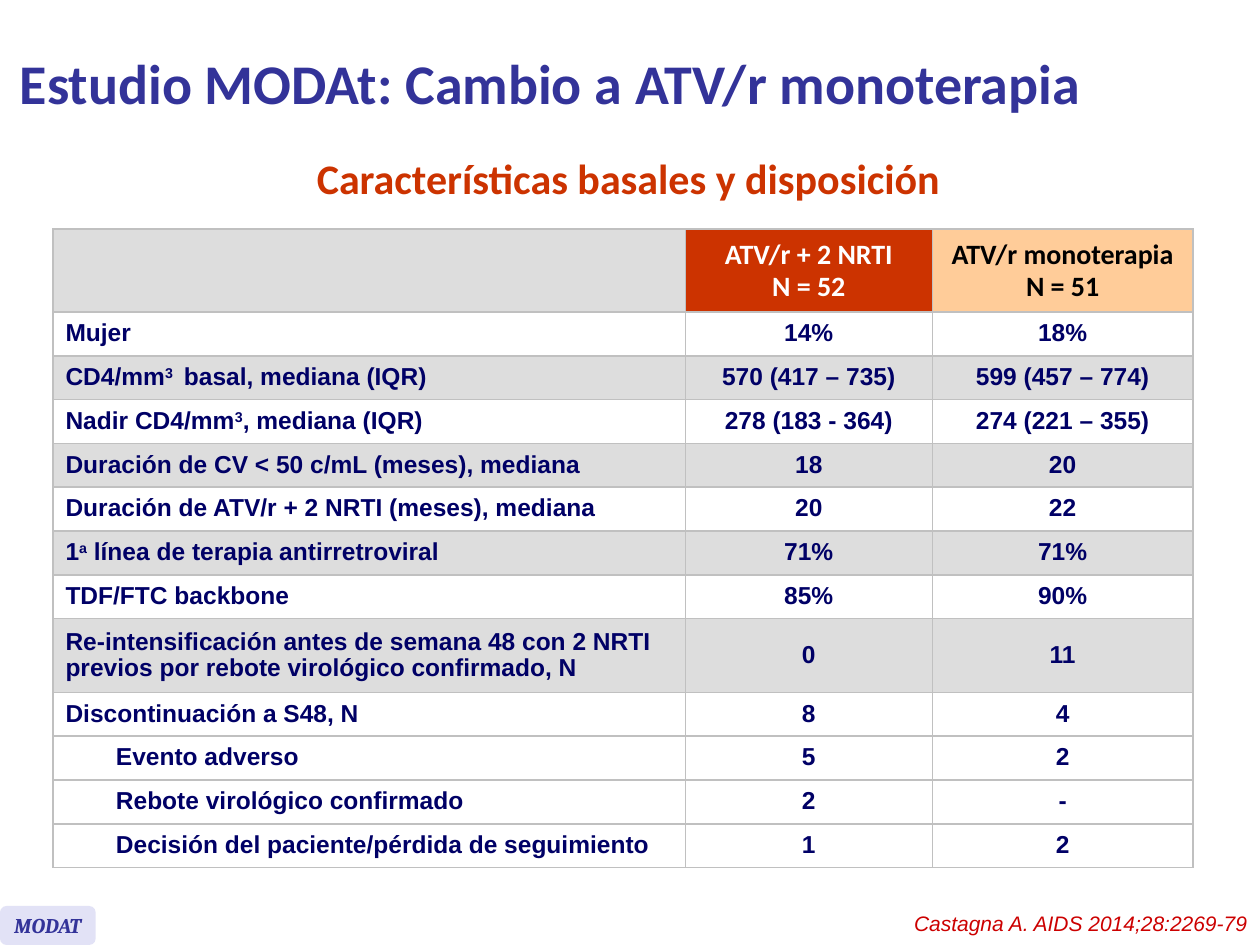
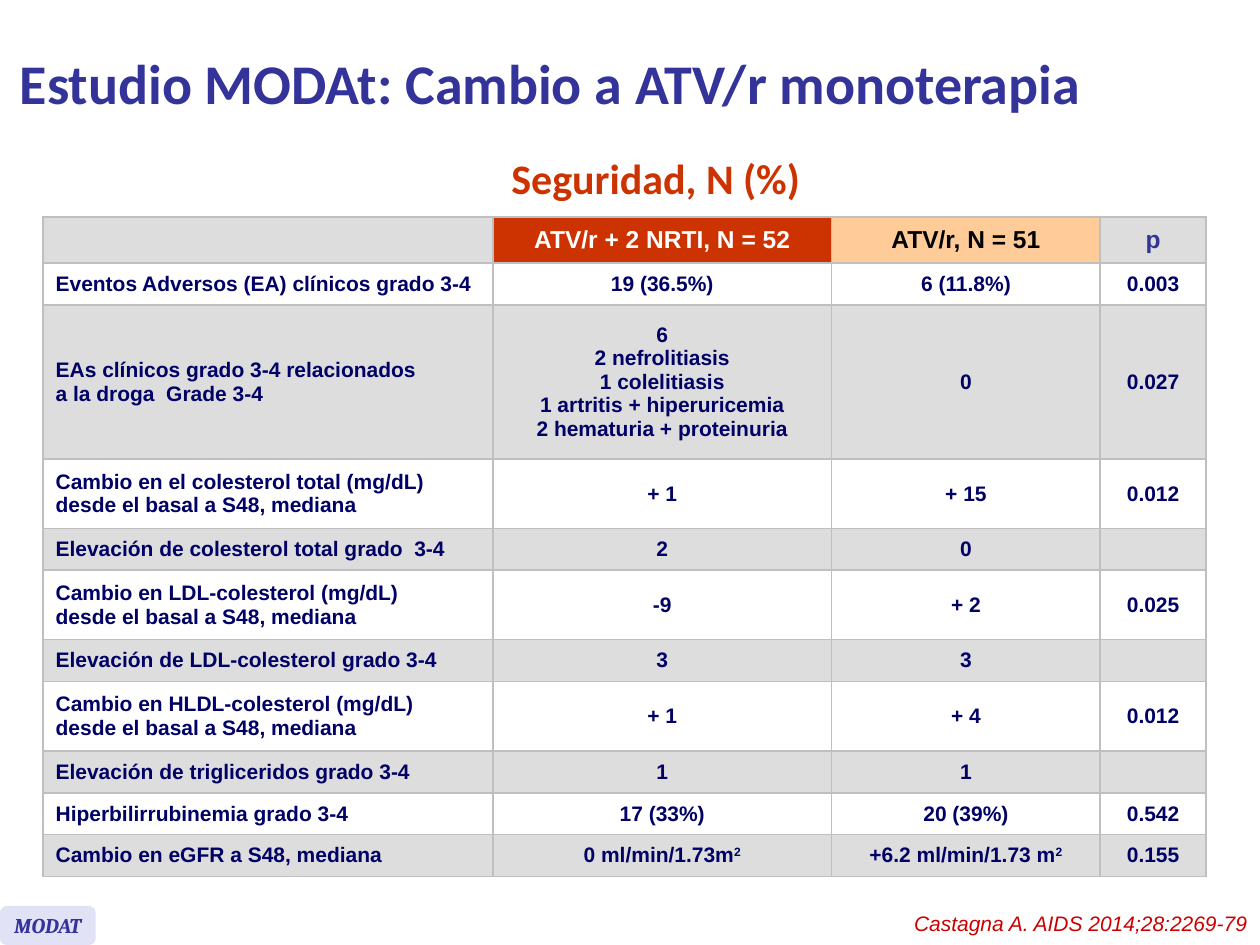
from lxml import etree
from pptx import Presentation
from pptx import util as u
from pptx.dml import color
from pptx.enum import shapes, text
from pptx.oxml import ns

NAVY, INDIGO, RED, PEACH = "000066", "333399", "CC3300", "FFCC99"
GREY, WHITE, BLACK, LILAC, CITE = "DDDDDD", "FFFFFF", "000000", "E2E2F6", "CC0000"
LEFT, CENTER, RIGHT = text.PP_ALIGN.LEFT, text.PP_ALIGN.CENTER, text.PP_ALIGN.RIGHT
MIDDLE, TOP = text.MSO_ANCHOR.MIDDLE, text.MSO_ANCHOR.TOP

TITLE = "Estudio MODAt: Cambio a ATV/r monoterapia"
STUDY = "MODAT"
CITATION = "Castagna A. AIDS 2014;28:2269-79"

# ^ surrounds superscripts, | breaks a line, a newline starts a paragraph
BASELINE = {
    "subtitle": "Características basales y disposición",
    "subtitle_box": (126.7, 97.2, 465, 25.2),
    "origin": (30.24, 131),
    "columns": (28.8, 332.6, 141.1, 149),
    "label_columns": 2,
    "row_height": 25.03,
    "tall_rows": {0: 47.3, 8: 42.2},
    "white_from": 9,
    "indented_from": 10,
    "border": "C0C0C0",
    "header": {"size": 16, "font": "Calibri"},
    "body_size": 14,
    "line_spacing": 0.95,
    "rows": [
        ("", "ATV/r + 2 NRTI\nN = 52", "ATV/r monoterapia\nN = 51"),
        ("Mujer", "14%", "18%"),
        ("CD4/mm^3 ^ basal, mediana (IQR)", "570 (417 – 735)", "599 (457 – 774)"),
        ("Nadir CD4/mm^3^, mediana (IQR)", "278 (183 - 364)", "274 (221 – 355)"),
        ("Duración de CV < 50 c/mL (meses), mediana", "18", "20"),
        ("Duración de ATV/r + 2 NRTI (meses), mediana", "20", "22"),
        ("1^a^ línea de terapia antirretroviral", "71%", "71%"),
        ("TDF/FTC backbone", "85%", "90%"),
        ("Re-intensificación antes de semana 48 con 2 NRTI previos por rebote "
         "virológico confirmado, N", "0", "11"),
        ("Discontinuación a S48, N", "8", "4"),
        ("Evento adverso", "5", "2"),
        ("Rebote virológico confirmado", "2", "-"),
        ("Decisión del paciente/pérdida de seguimiento", "1", "2"),
    ],
}
SAFETY = {
    "subtitle": "Seguridad, N (%)",
    "subtitle_box": (270.7, 97.2, 208, 25.2),
    "origin": (24.6, 124),
    "columns": (257, 193.7, 153.4, 60.5),
    "label_columns": 1,
    "row_height": 23.9,
    "tall_rows": {0: 26.4, 2: 88, 3: 39.7, 5: 39.7, 7: 39.7},
    "white_from": 99,
    "indented_from": 99,
    "border": "BFBFBF",
    "header": {"size": 14, "font": "Arial"},
    "body_size": 12,
    "line_spacing": 1.0,
    "rows": [
        ("", "ATV/r + 2 NRTI, N = 52", "ATV/r, N = 51", "p"),
        ("Eventos Adversos (EA) clínicos grado 3-4", "19 (36.5%)", "6 (11.8%)", "0.003"),
        ("EAs clínicos grado 3-4 relacionados|a la droga  Grade 3-4",
         "6\n2 nefrolitiasis\n1 colelitiasis\n1 artritis + hiperuricemia\n"
         "2 hematuria + proteinuria", "0", "0.027"),
        ("Cambio en el colesterol total (mg/dL) desde el basal a S48, mediana",
         "+ 1", "+ 15", "0.012"),
        ("Elevación de colesterol total grado  3-4", "2", "0", ""),
        ("Cambio en LDL-colesterol (mg/dL)|desde el basal a S48, mediana",
         "-9", "+ 2", "0.025"),
        ("Elevación de LDL-colesterol grado 3-4", "3", "3", ""),
        ("Cambio en HLDL-colesterol (mg/dL) desde el basal a S48, mediana",
         "+ 1", "+ 4", "0.012"),
        ("Elevación de trigliceridos grado 3-4", "1", "1", ""),
        ("Hiperbilirrubinemia grado 3-4", "17 (33%)", "20 (39%)", "0.542"),
        ("Cambio en eGFR a S48, mediana", "0 ml/min/1.73m^2^",
         "+6.2 ml/min/1.73 m^2^", "0.155"),
    ],
}
HEADER_COLOURS = [(GREY, BLACK), (RED, WHITE), (PEACH, BLACK), (GREY, INDIGO)]


def rgb(value):
    return color.RGBColor.from_string(value)


def points(values):
    return [u.Pt(value) for value in values]


def write(frame, words, size=12, font="Arial", colour=NAVY, bold=True,
          italic=False, align=LEFT, spacing=None):
    for index, content in enumerate(words.split("\n")):
        para = frame.add_paragraph() if index else frame.paragraphs[0]
        para.alignment = align
        if spacing:
            para.line_spacing = spacing
        for number, line in enumerate(content.split("|")):
            if number:
                para.add_line_break()
            for part, piece in enumerate(line.split("^")):
                if not piece:
                    continue
                span = para.add_run()
                span.text = piece
                span.font.size, span.font.name = u.Pt(size), font
                span.font.bold, span.font.italic = bold, italic
                span.font.color.rgb = rgb(colour)
                if part % 2:
                    span.font._element.set("baseline", "30000")
        if not content:
            etree.SubElement(para._p, ns.qn("a:endParaRPr"), sz=str(size * 100))


def add_text(page, box, words, anchor=TOP, **style):
    frame = page.shapes.add_textbox(*points(box)).text_frame
    frame.word_wrap = True
    frame.vertical_anchor = anchor
    write(frame, words, **style)


def set_borders(cell, colour, hidden=""):
    properties = cell._tc.get_or_add_tcPr()
    for side in "LRTB":
        line = etree.SubElement(properties, ns.qn("a:ln" + side), w=str(u.Pt(1)))
        if side == hidden:
            etree.SubElement(line, ns.qn("a:noFill"))
        else:
            fill = etree.SubElement(line, ns.qn("a:solidFill"))
            etree.SubElement(fill, ns.qn("a:srgbClr"), val=colour)


def add_results(page, data):
    rows, widths, labels = data["rows"], data["columns"], data["label_columns"]
    heights = [data["tall_rows"].get(r, data["row_height"]) for r in range(len(rows))]
    box = (*data["origin"], sum(widths), sum(heights))
    table = page.shapes.add_table(len(rows), len(widths), *points(box)).table
    for column, width in zip(table.columns, widths):
        column.width = u.Pt(width)
    for r, (row, height) in enumerate(zip(rows, heights)):
        table.rows[r].height = u.Pt(height)
        indented = r >= data["indented_from"]
        if labels > 1 and not indented:
            table.cell(r, 0).merge(table.cell(r, labels - 1))
        blanks = [""] * (labels - 1)
        words = blanks + list(row) if indented else [row[0], *blanks, *row[1:]]
        for c, content in enumerate(words):
            cell = table.cell(r, c)
            group = max(0, c - labels + 1)
            style = {"size": data["body_size"], "spacing": data["line_spacing"],
                     "align": CENTER if group else LEFT}
            fill = WHITE if r % 2 or r >= data["white_from"] else GREY
            if r == 0:
                fill, style["colour"] = HEADER_COLOURS[group]
                style.update(data["header"])
            hidden = "RL"[c] if indented and c < labels else ""
            set_borders(cell, data["border"], hidden)
            cell.fill.solid()
            cell.fill.fore_color.rgb = rgb(fill)
            cell.vertical_anchor = MIDDLE
            write(cell.text_frame, content, **style)


def add_badge(page):
    badge = page.shapes.add_shape(shapes.MSO_SHAPE.ROUNDED_RECTANGLE,
                                  *points((0, 517.7, 54.7, 22.3)))
    badge.shadow.inherit = False
    badge.fill.solid()
    badge.fill.fore_color.rgb = rgb(LILAC)
    badge.line.fill.background()
    badge.text_frame.word_wrap = False
    badge.text_frame.vertical_anchor = MIDDLE
    write(badge.text_frame, STUDY, font="Cambria", colour=INDIGO, italic=True, align=CENTER)


def add_page(deck, data):
    page = deck.slides.add_slide(deck.slide_layouts[6])
    add_results(page, data)
    add_text(page, data["subtitle_box"], data["subtitle"], size=24, font="Calibri",
             colour=RED, align=CENTER, spacing=u.Pt(15.2))
    add_badge(page)
    add_text(page, (4.3, 3.6, 645, 87), TITLE, anchor=MIDDLE, size=32,
             font="Calibri", colour=INDIGO)
    add_text(page, (468, 517, 252, 21.6), CITATION, colour=CITE, bold=False,
             italic=True, align=RIGHT)


def main():
    deck = Presentation()
    deck.slide_width, deck.slide_height = points((720, 540))
    for data in (BASELINE, SAFETY):
        add_page(deck, data)
    deck.save("out.pptx")


if __name__ == "__main__":
    main()
